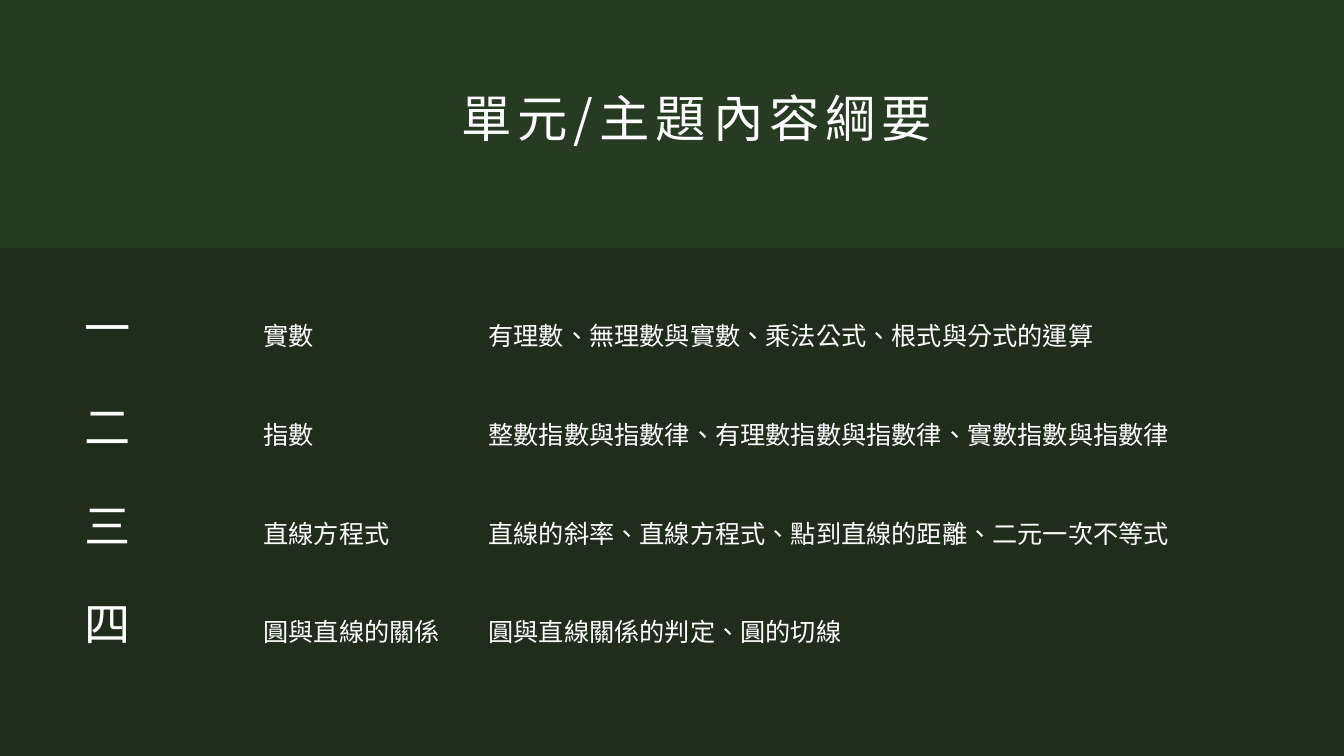
"""Build the slide that outlines the four units of a mathematics course."""
import pptx
import pptx.dml.color
import pptx.enum.lang
import pptx.enum.shapes
import pptx.enum.text
import pptx.oxml
import pptx.oxml.ns
import pptx.util
from pptx.util import Cm

TITLE = "\t單元/主題\t內容綱要"
UNITS = [
    ("一", "實數", "有理數、無理數與實數、乘法公式、根式與分式的運算"),
    ("二", "指數", "整數指數與指數律、有理數指數與指數律、實數指數與指數律"),
    ("三", "直線方程式", "直線的斜率、直線方程式、點到直線的距離、二元一次不等式"),
    ("四", "圓與直線的關係", "圓與直線關係的判定、圓的切線"),
]
COLORS = {"background": "273B22", "panel": "202D1D", "text": "FFFFFF"}
SLIDE_WIDTH, SLIDE_HEIGHT = Cm(33.87), Cm(19.05)
PANEL_TOP = Cm(6.25)
ROW_HEIGHT = Cm(2.49)
COLUMNS = [
    {"width": Cm(4.5), "size": 33, "font": "Noto Sans CJK TC", "top": Cm(0.08)},
    {"width": Cm(5.67), "size": 18, "font": "Arial", "top": Cm(0.66)},
    {"width": Cm(19.69), "size": 18, "font": "Arial", "top": Cm(0.66)},
]
PLAIN_TABLE_STYLE = "{2D5ABB26-0587-4C30-8999-92F81FD0307C}"


def paint(fill, color):
    """Fill with one of the named colours."""
    fill.solid()
    fill.fore_color.rgb = pptx.dml.color.RGBColor.from_string(COLORS[color])


def format_paragraph(paragraph, size, name, spacing=0):
    """Set the font for Latin and East Asian text, with letter spacing in points."""
    font = paragraph.font
    font.size = pptx.util.Pt(size)
    font.bold = False
    font.language_id = pptx.enum.lang.MSO_LANGUAGE_ID.TRADITIONAL_CHINESE
    paint(font.fill, "text")
    font.name = name
    properties = paragraph._p.pPr.find(pptx.oxml.ns.qn("a:defRPr"))
    properties.set("spc", str(spacing * 100))
    east_asian = pptx.oxml.parse_xml(f'<a:ea {pptx.oxml.ns.nsdecls("a")} typeface="{name}"/>')
    properties.find(pptx.oxml.ns.qn("a:latin")).addnext(east_asian)


def add_title(slide):
    """Place the title in its placeholder."""
    title = slide.shapes.title
    title.left, title.top, title.width, title.height = Cm(3), Cm(1.5), Cm(27.86), Cm(2.92)
    frame = title.text_frame
    frame.text = TITLE
    frame.auto_size = pptx.enum.text.MSO_AUTO_SIZE.NONE
    frame.vertical_anchor = pptx.enum.text.MSO_ANCHOR.MIDDLE
    frame.margin_left = frame.margin_right = frame.margin_top = frame.margin_bottom = 0
    paragraph = frame.paragraphs[0]
    paragraph.alignment = pptx.enum.text.PP_ALIGN.CENTER
    format_paragraph(paragraph, 36, "Noto Sans CJK SC", spacing=4)


def add_panel(slide):
    """Add the dark panel behind the table."""
    panel = slide.shapes.add_shape(
        pptx.enum.shapes.MSO_SHAPE.RECTANGLE, 0, PANEL_TOP, SLIDE_WIDTH, SLIDE_HEIGHT - PANEL_TOP)
    panel.shadow.inherit = False
    paint(panel.fill, "panel")
    panel.line.fill.background()


def add_unit_table(slide):
    """Add the table with one row for each unit."""
    width = sum(column["width"] for column in COLUMNS)
    table = slide.shapes.add_table(
        len(UNITS), len(COLUMNS), Cm(2.06), Cm(6.91), width, ROW_HEIGHT * len(UNITS)).table
    table.first_row = table.horz_banding = False
    table._tbl.tblPr.find(pptx.oxml.ns.qn("a:tableStyleId")).text = PLAIN_TABLE_STYLE
    for column, settings in zip(table.columns, COLUMNS):
        column.width = settings["width"]
    for row, unit in zip(table.rows, UNITS):
        row.height = ROW_HEIGHT
        for cell, text, settings in zip(row.cells, unit, COLUMNS):
            cell.text = text
            cell.fill.background()
            cell.vertical_anchor = pptx.enum.text.MSO_ANCHOR.MIDDLE
            cell.margin_left = cell.margin_right = Cm(0.08)
            cell.margin_top, cell.margin_bottom = settings["top"], 0
            format_paragraph(cell.text_frame.paragraphs[0], settings["size"], settings["font"])


def main():
    """Create and save the presentation."""
    presentation = pptx.Presentation()
    presentation.slide_width, presentation.slide_height = SLIDE_WIDTH, SLIDE_HEIGHT
    slide = presentation.slides.add_slide(presentation.slide_layouts[5])
    paint(slide.background.fill, "background")
    add_title(slide)
    add_panel(slide)
    add_unit_table(slide)
    presentation.save("out.pptx")


if __name__ == "__main__":
    main()
